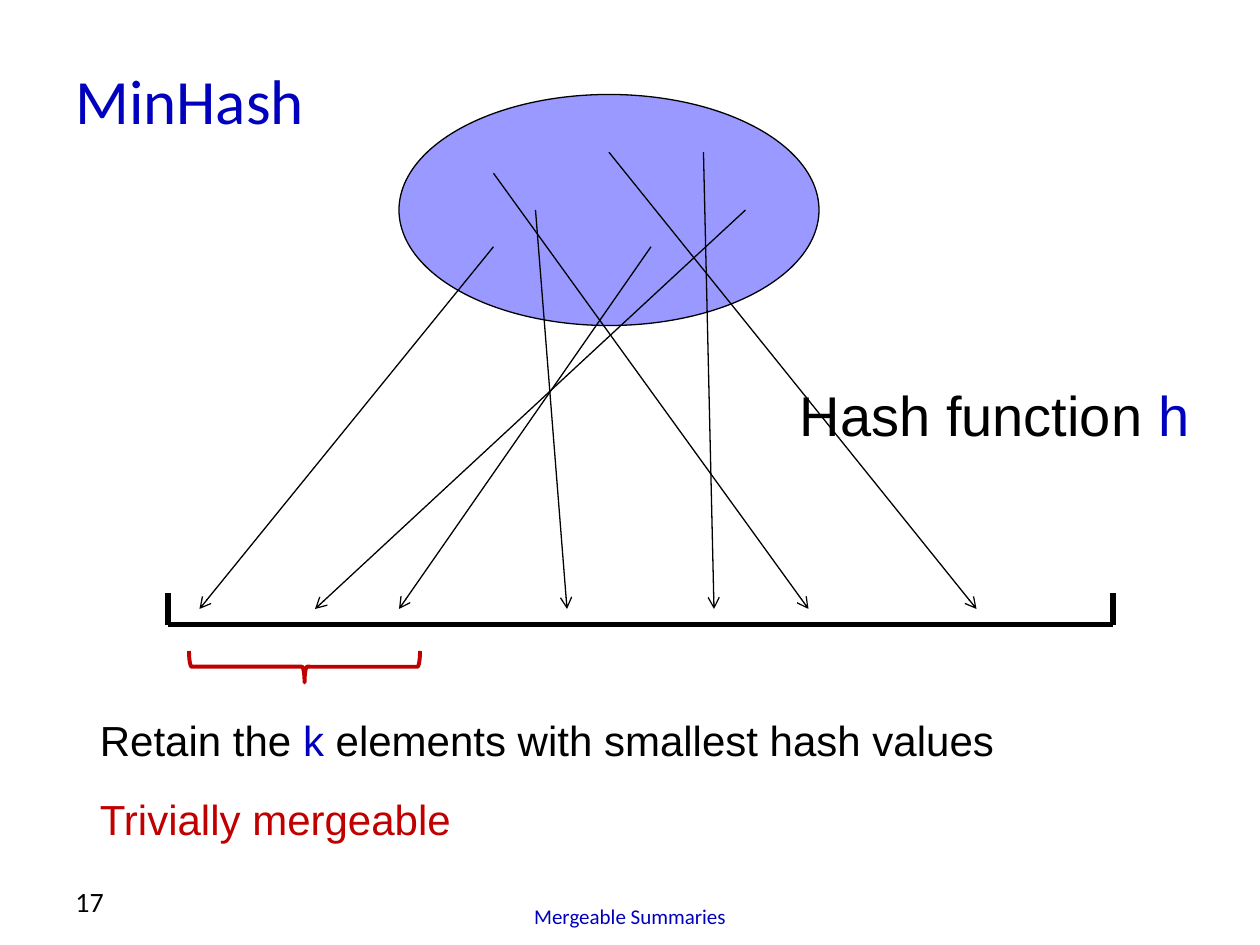
from lxml import etree
from pptx import Presentation
from pptx.dml.color import RGBColor
from pptx.enum import shapes, text
from pptx.oxml.ns import qn
from pptx.util import Pt

COLORS = {
    "black": "000000",
    "white": "FFFFFF",
    "blue": "0000BE",
    "lavender": "9999FF",
    "red": "C00000",
}


def rgb(name):
    return RGBColor.from_string(COLORS[name])


class Deck:
    body_font = "Arial"
    label_font = "Calibri"

    def __init__(self, prs):
        self.slide = prs.slides.add_slide(prs.slide_layouts[6])

    def text(self, box, runs, size, font=body_font, anchor="TOP", align="LEFT", wrap=True):
        sp = self.slide.shapes.add_textbox(*map(Pt, box))
        tf = sp.text_frame
        tf.word_wrap = wrap
        if not wrap:
            tf.auto_size = text.MSO_AUTO_SIZE.SHAPE_TO_FIT_TEXT
        tf.vertical_anchor = text.MSO_ANCHOR[anchor]
        p = tf.paragraphs[0]
        p.alignment = text.PP_ALIGN[align]
        for words, color in runs:
            r = p.add_run()
            r.text = words
            r.font.size = Pt(size)
            r.font.name = font
            r.font.color.rgb = rgb(color)

    def shape(self, kind, box, fill, line, width, rotation=0):
        sp = self.slide.shapes.add_shape(kind, *map(Pt, box))
        sp.rotation = rotation
        sp.shadow.inherit = False
        sp.fill.solid()
        sp.fill.fore_color.rgb = rgb(fill)
        sp.line.color.rgb = rgb(line)
        sp.line.width = Pt(width)

    def line(self, start, end, width, arrow=False):
        cn = self.slide.shapes.add_connector(
            shapes.MSO_CONNECTOR.STRAIGHT, *map(Pt, start + end))
        cn.line.color.rgb = rgb("black")
        cn.line.width = Pt(width)
        if arrow:
            etree.SubElement(cn.line._get_or_add_ln(), qn("a:tailEnd"), type="arrow")
        etree.SubElement(cn._element.spPr, qn("a:effectLst"))


def main():
    prs = Presentation()
    prs.slide_width, prs.slide_height = Pt(720), Pt(540)
    deck = Deck(prs)

    deck.text((36, 24, 684, 66), [("MinHash", "blue")], 36, deck.label_font, "MIDDLE")
    deck.text((186, 498, 348, 36), [("Mergeable Summaries", "blue")], 12,
              deck.label_font, "BOTTOM", "CENTER")
    deck.text((36, 492, 168, 36), [("17", "black")], 16, deck.label_font, "BOTTOM")

    deck.shape(shapes.MSO_SHAPE.OVAL, (228, 54, 240, 132), "lavender", "black", 0.75)
    deck.text((450, 214, 239, 46), [("Hash function ", "black"), ("h", "blue")], 32, wrap=False)

    left, right, axis_y, tick = 96, 636, 357, 18
    deck.line((left, axis_y), (right, axis_y), 3)
    for x in (right, left):
        deck.line((x, axis_y - tick), (x, axis_y), 3)

    hash_y = 348
    hashes = [
        ((282, 141), 114),
        ((306, 120), 324),
        ((282, 99), 462),
        ((372, 141), 228),
        ((348, 87), 558),
        ((426, 120), 180),
        ((402, 87), 408),
    ]
    for element, hash_x in hashes:
        deck.line(element, (hash_x, hash_y), 0.75, arrow=True)

    deck.shape(shapes.MSO_SHAPE.RIGHT_BRACE, (165, 315, 18, 132), "white", "red", 2.25, 90)
    deck.text((50, 405, 531, 36),
              [("Retain the ", "black"), ("k ", "blue"),
               ("elements with smallest hash values", "black")], 24, wrap=False)
    deck.text((50, 450, 217, 36), [("Trivially mergeable", "red")], 24, wrap=False)

    prs.save("out.pptx")


if __name__ == "__main__":
    main()
